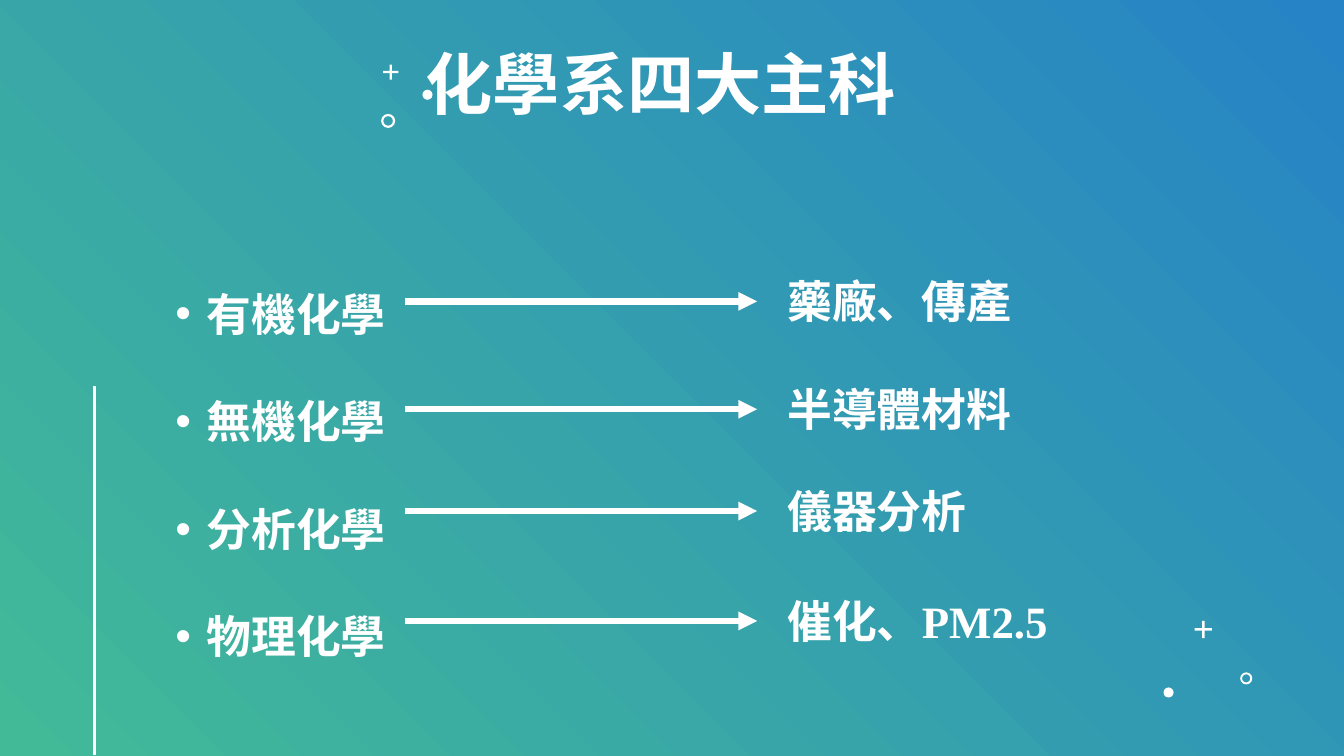
"""Build the slide on the four main subjects of a chemistry department."""
from dataclasses import dataclass

from lxml.etree import SubElement
from pptx import Presentation
from pptx.dml.color import RGBColor
from pptx.enum.shapes import MSO_CONNECTOR, MSO_SHAPE
from pptx.enum.text import MSO_AUTO_SIZE, PP_ALIGN
from pptx.oxml.ns import qn
from pptx.util import Inches, Pt

WHITE = RGBColor(0xFF, 0xFF, 0xFF)
BLUE = RGBColor(0x26, 0x83, 0xC6)
GREEN = RGBColor(0x42, 0xBA, 0x97)
FRAME = {"word_wrap": True, "auto_size": MSO_AUTO_SIZE.SHAPE_TO_FIT_TEXT}
FONT = {"name": "Lato", "size": Pt(32), "bold": True}
BULLET = {"line_spacing": 2.0}
CENTER = {"alignment": PP_ALIGN.CENTER}


@dataclass
class Mark:
    kind: MSO_SHAPE
    left: float
    top: float
    size: float
    adjust: float | None = None


@dataclass
class Career:
    subject: str
    top: float
    width: float
    text: str
    latin: str = ""


MARKS = [
    Mark(MSO_SHAPE.CROSS, 3.8, 0.64, 0.15, 0.43),
    Mark(MSO_SHAPE.OVAL, 4.19, 0.89, 0.1),
    Mark(MSO_SHAPE.DONUT, 3.78, 1.13, 0.14, 0.16),
    Mark(MSO_SHAPE.CROSS, 11.85, 6.16, 0.17, 0.43),
    Mark(MSO_SHAPE.DONUT, 12.3, 6.67, 0.12, 0.16),
    Mark(MSO_SHAPE.OVAL, 11.54, 6.82, 0.1),
]
CAREERS = [
    Career("有機化學", 2.67, 2.45, "藥廠、傳產"),
    Career("無機化學", 3.74, 2.45, "半導體材料"),
    Career("分析化學", 4.75, 2, "儀器分析"),
    Career("物理化學", 5.84, 2.81, "催化、", "PM2.5"),
]


def apply(target, values: dict) -> None:
    for name, value in values.items():
        setattr(target, name, value)


def add_run(para, text: str, **changes) -> None:
    run = para.add_run()
    run.text = text
    apply(run.font, FONT | changes)
    run.font.color.rgb = WHITE


def add_box(shapes, left: float, top: float, width: float, height: float):
    frame = shapes.add_textbox(*map(Inches, (left, top, width, height))).text_frame
    apply(frame, FRAME)
    return frame


def add_bullet(para) -> None:
    props = para._p.get_or_add_pPr()
    indent = Inches(0.31)
    props.set("marL", str(indent))
    props.set("indent", str(-indent))
    color = SubElement(props, qn("a:buClr"))
    SubElement(color, qn("a:srgbClr"), val=str(WHITE))
    SubElement(props, qn("a:buFont"), typeface="Arial")
    SubElement(props, qn("a:buChar"), char="•")
    apply(para, BULLET)


def add_line(shapes, start: tuple, end: tuple, width: float, arrow: bool = False) -> None:
    line = shapes.add_connector(MSO_CONNECTOR.STRAIGHT, *map(Inches, start + end))
    line.line.color.rgb = WHITE
    line.line.width = Pt(width)
    if arrow:
        SubElement(line.line._get_or_add_ln(), qn("a:tailEnd"), type="triangle")
    SubElement(line._element.spPr, qn("a:effectLst"))


def add_shape(shapes, kind: MSO_SHAPE, left: float, top: float, width: float, height: float):
    shape = shapes.add_shape(kind, *map(Inches, (left, top, width, height)))
    shape.shadow.inherit = False
    shape.line.fill.background()
    return shape


def add_mark(shapes, mark: Mark) -> None:
    shape = add_shape(shapes, mark.kind, mark.left, mark.top, mark.size, mark.size)
    if mark.adjust is not None:
        shape.adjustments[0] = mark.adjust
    shape.fill.solid()
    shape.fill.fore_color.rgb = WHITE


def add_back(shapes) -> None:
    fill = add_shape(shapes, MSO_SHAPE.RECTANGLE, 0, 0, 13.33, 7.5).fill
    fill.gradient()
    fill.gradient_angle = 225
    for stop, color, place in zip(fill.gradient_stops, (BLUE, GREEN), (0, 1)):
        stop.color.rgb = color
        stop.position = place


def add_career(shapes, career: Career) -> None:
    middle = career.top + 0.32
    add_line(shapes, (4.02, middle), (7.51, middle), 4.5, arrow=True)
    para = add_box(shapes, 7.71, career.top, career.width, 0.64).paragraphs[0]
    add_run(para, career.text)
    if career.latin:
        add_run(para, career.latin, name="Times New Roman")


def main() -> None:
    deck = Presentation()
    apply(deck, {"slide_width": Inches(13.33), "slide_height": Inches(7.5)})
    shapes = deck.slides.add_slide(deck.slide_layouts[6]).shapes
    add_back(shapes)
    for mark in MARKS:
        add_mark(shapes, mark)
    add_line(shapes, (0.94, 3.83), (0.94, 7.49), 2)

    title = add_box(shapes, 4.1, 0.37, 4.91, 0.91).paragraphs[0]
    apply(title, CENTER)
    add_run(title, "化學系四大主科", size=Pt(48))

    topics = add_box(shapes, 1.64, 2.26, 2.31, 4.25)
    for place, career in enumerate(CAREERS):
        para = topics.add_paragraph() if place else topics.paragraphs[0]
        add_bullet(para)
        add_run(para, career.subject)
    for career in CAREERS:
        add_career(shapes, career)
    deck.save("out.pptx")


if __name__ == "__main__":
    main()
